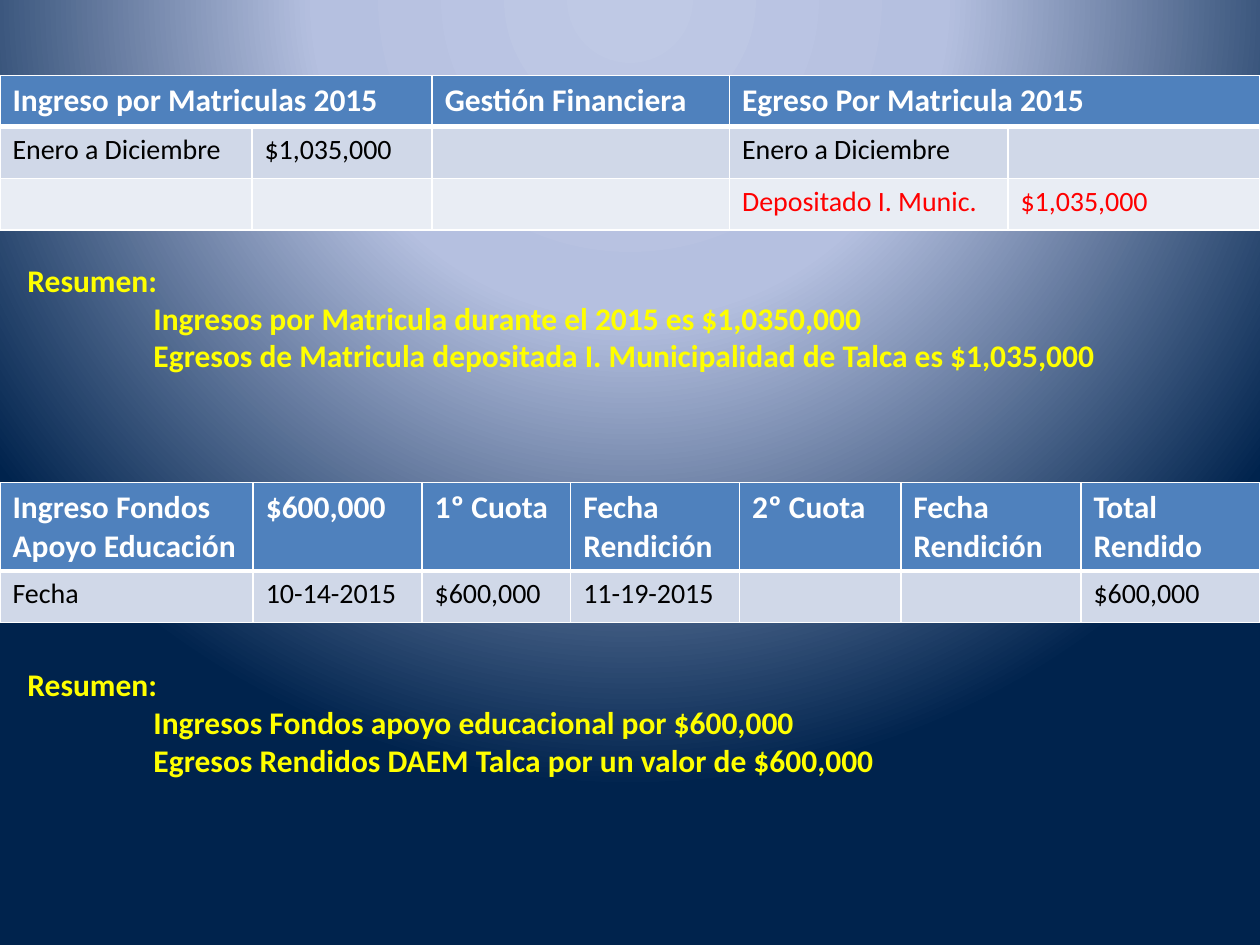
from lxml.etree import SubElement
from pptx import Presentation
from pptx.dml.color import RGBColor
from pptx.enum.text import MSO_AUTO_SIZE
from pptx.oxml.ns import qn
from pptx.util import Inches, Pt

FONT = "Calibri"
WHITE = RGBColor(0xFF, 0xFF, 0xFF)
BLACK = RGBColor(0x00, 0x00, 0x00)
RED = RGBColor(0xFF, 0x00, 0x00)
YELLOW = RGBColor(0xFF, 0xFF, 0x00)
HEADER_BLUE = RGBColor(0x4F, 0x81, 0xBD)
BANDS = [RGBColor(0xD0, 0xD8, 0xE8), RGBColor(0xE9, 0xED, 0xF4)]
GLOW_STOPS = [
    (0, RGBColor(0xBF, 0xC9, 0xE5)),
    (40, RGBColor(0xB5, 0xC0, 0xE0)),
    (100, RGBColor(0x00, 0x23, 0x4D)),
]


def add_color(parent, color):
    SubElement(parent, qn("a:srgbClr"), val=str(color))


def paint_background(slide):
    slide.background.fill.gradient()
    gradient = next(slide.element.iter(qn("a:gradFill")))
    for child in list(gradient):
        gradient.remove(child)
    stops = SubElement(gradient, qn("a:gsLst"))
    for percent, color in GLOW_STOPS:
        add_color(SubElement(stops, qn("a:gs"), pos=str(percent * 1000)), color)
    circle = SubElement(gradient, qn("a:path"), path="circle")
    SubElement(circle, qn("a:fillToRect"), l="50000", t="-80000", r="50000", b="180000")


def set_borders(cell, top_width, bottom_width):
    properties = cell._tc.get_or_add_tcPr()
    widths = {"L": 1, "R": 1, "T": top_width, "B": bottom_width}
    for position, (side, width) in enumerate(widths.items()):
        line = SubElement(properties, qn(f"a:ln{side}"), w=str(Pt(width)))
        add_color(SubElement(line, qn("a:solidFill")), WHITE)
        properties.insert(position, line)


def format_font(paragraph, size, color, bold):
    font = paragraph.font
    font.name = FONT
    font.size = Pt(size)
    font.bold = bold
    font.color.rgb = color


def fill_cell(cell, text, row_index, color):
    is_header = row_index == 0
    cell.text = text
    format_font(cell.text_frame.paragraphs[0], 18 if is_header else 16, color, is_header)
    cell.fill.solid()
    cell.fill.fore_color.rgb = HEADER_BLUE if is_header else BANDS[(row_index - 1) % 2]
    set_borders(cell, 3 if row_index == 1 else 1, 3 if is_header else 1)


def add_money_table(slide, top, widths, heights, rows, red_row=None):
    frame = slide.shapes.add_table(
        len(rows), len(widths), Inches(0), Inches(top), Inches(10), Inches(sum(heights))
    )
    table = frame.table
    for column, width in zip(table.columns, widths):
        column.width = Inches(width)
    for row, height in zip(table.rows, heights):
        row.height = Inches(height)
    for row_index, texts in enumerate(rows):
        color = WHITE if row_index == 0 else RED if row_index == red_row else BLACK
        for column_index, text in enumerate(texts):
            fill_cell(table.cell(row_index, column_index), text, row_index, color)
    return table


def add_summary(slide, top, lines):
    box = slide.shapes.add_textbox(Inches(0.12), Inches(top), Inches(10), Inches(1.01))
    text_frame = box.text_frame
    text_frame.word_wrap = True
    text_frame.auto_size = MSO_AUTO_SIZE.SHAPE_TO_FIT_TEXT
    text_frame.text = "\n\t".join(["Resumen:", *lines])
    for paragraph in text_frame.paragraphs:
        format_font(paragraph, 18, YELLOW, True)
        properties = paragraph._p.get_or_add_pPr()
        properties.set("defTabSz", str(Inches(1)))
        tabs = SubElement(properties, qn("a:tabLst"))
        SubElement(tabs, qn("a:tab"), pos=str(Inches(1)), algn="l")
        properties.insert(0, tabs)


def main():
    presentation = Presentation()
    presentation.slide_width = Inches(10)
    presentation.slide_height = Inches(7.5)
    slide = presentation.slides.add_slide(presentation.slide_layouts[6])
    paint_background(slide)

    enrollment = add_money_table(
        slide, 0.6, [2, 1.43, 2.36, 2.21, 2], [0.4, 0.41, 0.41],
        [
            ["Ingreso por Matriculas 2015", "", "Gestión Financiera", "Egreso Por Matricula 2015", ""],
            ["Enero a Diciembre", "$1,035,000", "", "Enero a Diciembre", ""],
            ["", "", "", "Depositado I. Munic.", "$1,035,000"],
        ],
        red_row=2,
    )
    for first in (0, 3):
        enrollment.cell(0, first).merge(enrollment.cell(0, first + 1))
    add_summary(slide, 2.02, [
        "Ingresos por Matricula durante el 2015 es $1,0350,000",
        "Egresos de Matricula depositada I. Municipalidad de Talca es $1,035,000",
    ])

    add_money_table(
        slide, 3.83, [2.01, 1.34, 1.18, 1.34, 1.28, 1.43, 1.42], [0.7, 0.41],
        [
            ["Ingreso Fondos Apoyo Educación", "$600,000", "1º Cuota", "Fecha Rendición",
             "2º Cuota", "Fecha Rendición", "Total Rendido"],
            ["Fecha", "10-14-2015", "$600,000", "11-19-2015", "", "", "$600,000"],
        ],
    )
    add_summary(slide, 5.23, [
        "Ingresos Fondos apoyo educacional por $600,000",
        "Egresos Rendidos DAEM Talca por un valor de $600,000",
    ])
    presentation.save("out.pptx")


if __name__ == "__main__":
    main()
